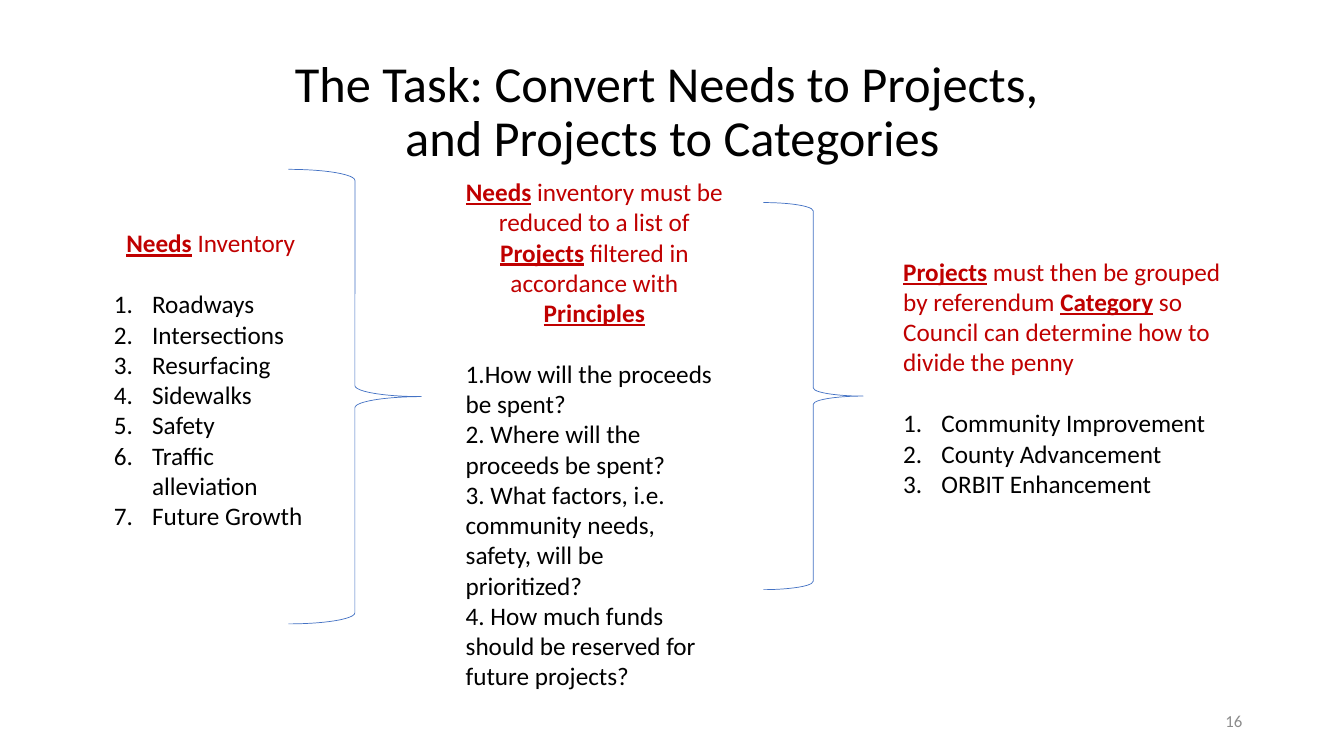
from lxml import etree
from pptx import Presentation
from pptx.dml.color import RGBColor
from pptx.enum.shapes import MSO_SHAPE
from pptx.enum.text import MSO_ANCHOR, MSO_AUTO_SIZE, PP_ALIGN
from pptx.oxml.ns import qn
from pptx.util import Inches, Pt

LEFT, CENTER, RIGHT = PP_ALIGN.LEFT, PP_ALIGN.CENTER, PP_ALIGN.RIGHT
MIDDLE = MSO_ANCHOR.MIDDLE
FIT_SHAPE = MSO_AUTO_SIZE.SHAPE_TO_FIT_TEXT
RIGHT_BRACE = MSO_SHAPE.RIGHT_BRACE

COLORS = {"text": "000000", "accent": "C00000", "brace": "4472C4", "number": "8C8C8C"}

prs = Presentation()
prs.slide_width, prs.slide_height = Inches(13.33), Inches(7.5)
s = prs.slides.add_slide(prs.slide_layouts[6])


def add_box(left, top, width, height):
    tf = s.shapes.add_textbox(Inches(left), Inches(top), Inches(width), Inches(height)).text_frame
    tf.word_wrap = True
    return tf


def style(p, size, color, align=LEFT):
    p.alignment = align
    p.font.name = "Calibri"
    p.font.size = Pt(size)
    p.font.color.rgb = RGBColor.from_string(COLORS[color])


tf = add_box(0.92, 0.4, 11.5, 1.45)
tf.vertical_anchor = MIDDLE
p = tf.paragraphs[0]
p.text = "The Task: Convert Needs to Projects, \vand Projects to Categories"
p.line_spacing = 0.9
style(p, 36, "text", CENTER)

tf = add_box(9.42, 6.95, 3, 0.4)
tf.vertical_anchor = MIDDLE
p = tf.paragraphs[0]
p.text = "16"
style(p, 12, "number", RIGHT)

# Each heading alternates between key terms and plain wording, starting with a key term.
columns = [
    ((1.03, 2.21, 2.12, 3.13), CENTER, True,
     ["Needs", " Inventory"],
     ["Roadways", "Intersections", "Resurfacing", "Sidewalks", "Safety",
      "Traffic alleviation", "Future Growth"]),
    ((4.52, 1.7, 2.75, 5.25), CENTER, False,
     ["Needs", " inventory must be reduced to a list of ", "Projects",
      " filtered in accordance with ", "Principles"],
     ["1.How will the proceeds be spent?",
      "2. Where will the proceeds be spent?",
      "3. What factors, i.e. community needs, safety, will be prioritized?",
      "4. How much funds should be reserved for future projects?"]),
    ((8.86, 2.49, 3.56, 2.52), LEFT, True,
     ["Projects", " must then be grouped by referendum ", "Category",
      " so Council can determine how to divide the penny"],
     ["Community Improvement", "County Advancement", "ORBIT Enhancement"]),
]
for box, align, numbered, heading, items in columns:
    tf = add_box(*box)
    tf.auto_size = FIT_SHAPE
    p = tf.paragraphs[0]
    style(p, 18, "accent", align)
    p.space_after = Pt(22)
    for i, part in enumerate(heading):
        r = p.add_run()
        r.text = part
        r.font.bold = r.font.underline = i % 2 == 0
    for item in items:
        p = tf.add_paragraph()
        p.text = item
        style(p, 18, "text")
        if numbered:
            pPr = p._p.get_or_add_pPr()
            pPr.set("marL", str(Inches(0.38)))
            pPr.set("indent", str(-Inches(0.38)))
            bullet = etree.Element(qn("a:buAutoNum"), type="arabicPeriod")
            pPr.insert_element_before(bullet, "a:tabLst", "a:defRPr", "a:extLst")

for left, top, width, height in [(2.86, 1.68, 1.32, 4.51), (7.57, 2.01, 0.99, 3.84)]:
    sp = s.shapes.add_shape(RIGHT_BRACE, Inches(left), Inches(top), Inches(width), Inches(height))
    sp.shadow.inherit = False
    sp.fill.background()
    sp.line.color.rgb = RGBColor.from_string(COLORS["brace"])
    sp.line.width = Pt(0.5)

prs.save("out.pptx")
